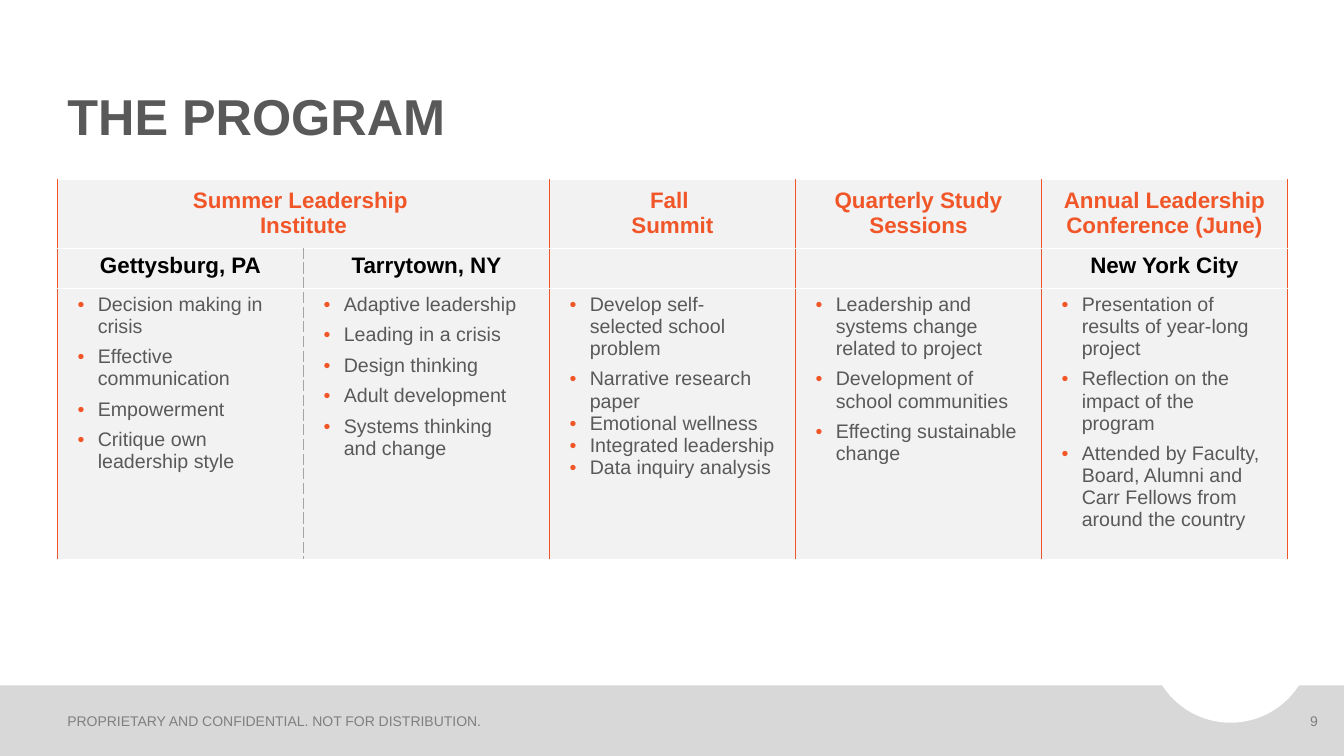
from lxml import etree
from pptx import Presentation
from pptx.dml.color import RGBColor
from pptx.enum.shapes import MSO_SHAPE
from pptx.enum.text import MSO_ANCHOR, PP_ALIGN
from pptx.oxml.ns import qn
from pptx.util import Emu, Inches, Pt

RECT, OVAL = MSO_SHAPE.RECTANGLE, MSO_SHAPE.OVAL
TOP, MID, LOW = MSO_ANCHOR.TOP, MSO_ANCHOR.MIDDLE, MSO_ANCHOR.BOTTOM
LEFT, MIDST, RIGHT = PP_ALIGN.LEFT, PP_ALIGN.CENTER, PP_ALIGN.RIGHT

HUES = {"accent": "F15628", "text": "595959", "muted": "7F7F7F",
        "band": "D8D8D8", "cell": "F2F2F2", "dash": "A5A5A5",
        "white": "FFFFFF", "black": "000000"}

HEADS = ["Summer Leadership \nInstitute", "", "Fall \nSummit",
         "Quarterly Study Sessions", "Annual Leadership Conference (June)"]
PLACES = ["Gettysburg, PA", "Tarrytown, NY", "", "", "New York City"]
TOPICS = [
    ["Decision making in crisis", "Effective communication", "Empowerment",
     "Critique own leadership style"],
    ["Adaptive leadership", "Leading in a crisis", "Design thinking",
     "Adult development", "Systems thinking and change"],
    ["Develop self-selected school problem", "Narrative research paper",
     "Emotional wellness", "Integrated leadership", "Data inquiry analysis"],
    ["Leadership and systems change related to project",
     "Development of school communities", "Effecting sustainable change"],
    ["Presentation of results of year-long project",
     "Reflection on the impact of the program",
     "Attended by Faculty, Board, Alumni and Carr Fellows from around the "
     "country"],
]
TIGHT = TOPICS[2][2:]  # topics set without a gap above

EDGE = 0.57
COL = 2.44
ROWS = [0.65, 0.4, 2.69]


def style(para, size, hue, bold=False, align=LEFT):
    para.alignment = align
    font = para.font
    font.name, font.size, font.bold = "Arial", Pt(size), bold
    font.color.rgb = RGBColor.from_string(HUES[hue])


def border(cell, side, hue, dash="solid"):
    """Draw a 1 pt line on one side (L, R, T or B) of a cell."""
    props = cell._tc.get_or_add_tcPr()
    line = etree.SubElement(props, qn(f"a:ln{side}"), w=str(Pt(1)))
    fill = etree.SubElement(line, qn("a:solidFill"))
    etree.SubElement(fill, qn("a:srgbClr"), val=HUES[hue])
    etree.SubElement(line, qn("a:prstDash"), val=dash)


deck = Presentation()
deck.slide_width, deck.slide_height = Inches(13.33), Inches(7.5)
slide = deck.slides.add_slide(deck.slide_layouts[6])

# Footer band with the round notch
for kind, box, hue in [(RECT, (0, 6.8, 13.33, 0.7), "band"),
                       (OVAL, (11.4, 5.56, 1.61, 1.61), "white")]:
    shape = slide.shapes.add_shape(kind, *map(Inches, box))
    shape.shadow.inherit = False
    shape.fill.solid()
    shape.fill.fore_color.rgb = RGBColor.from_string(HUES[hue])
    shape.line.fill.background()

# Title, footer and page number
for words, box, anchor, size, hue, bold, align in [
    ("THE PROGRAM", (EDGE, 0.3, 12.2, 1.2), LOW, 36, "text", True, LEFT),
    ("PROPRIETARY AND CONFIDENTIAL. NOT FOR DISTRIBUTION.",
     (EDGE, 7.01, 9, 0.28), MID, 10, "muted", False, LEFT),
    ("9", (12.61, 7.01, 0.56, 0.28), MID, 10, "muted", False, RIGHT),
]:
    frame = slide.shapes.add_textbox(*map(Inches, box)).text_frame
    frame.word_wrap = True
    frame.vertical_anchor = anchor
    para = frame.paragraphs[0]
    para.text = words
    para.line_spacing = 0.9 if anchor == LOW else 1.0
    style(para, size, hue, bold, align)

# Program table
count = len(HEADS)
table = slide.shapes.add_table(
    len(ROWS), count, Inches(EDGE), Inches(1.78),
    Inches(COL * count), Inches(sum(ROWS))).table
table.first_row = table.horz_banding = False
for col in table.columns:
    col.width = Inches(COL)
for row, height in zip(table.rows, ROWS):
    row.height = Inches(height)
table.cell(0, 0).merge(table.cell(0, 1))

for r in range(len(ROWS)):
    for c in range(count):
        cell = table.cell(r, c)
        for side, inner in (("L", c == 1), ("R", c == 0)):
            if not inner:
                border(cell, side, "accent")
            elif r > 0:
                border(cell, side, "dash", "dash")
        if r == 0:
            border(cell, "T", "white")
        if r == 2:
            border(cell, "B", "white")
        cell.fill.solid()
        cell.fill.fore_color.rgb = RGBColor.from_string(HUES["cell"])
        cell.margin_left = cell.margin_right = Inches(0.2)
        cell.margin_top = Inches(0.05)
        cell.margin_bottom = Inches(0.1 if r == 0 else 0.05)
        cell.vertical_anchor = LOW if r == 0 else TOP
        first = cell.text_frame.paragraphs[0]
        if r < 2:
            first.text = (HEADS, PLACES)[r][c]
            style(first, 16, ("accent", "black")[r], True, MIDST)
            continue
        for i, topic in enumerate(TOPICS[c]):
            para = cell.text_frame.add_paragraph() if i else first
            para.text = topic
            props = para._p.get_or_add_pPr()
            props.set("marL", str(Inches(0.2)))
            props.set("indent", str(Emu(-Inches(0.2))))
            if i and topic not in TIGHT:
                para.space_before = Pt(6)
            tint = etree.SubElement(props, qn("a:buClr"))
            etree.SubElement(tint, qn("a:srgbClr"), val=HUES["accent"])
            etree.SubElement(props, qn("a:buFont"), typeface="Arial")
            etree.SubElement(props, qn("a:buChar"), char="•")
            style(para, 14, "text")

deck.save("out.pptx")
